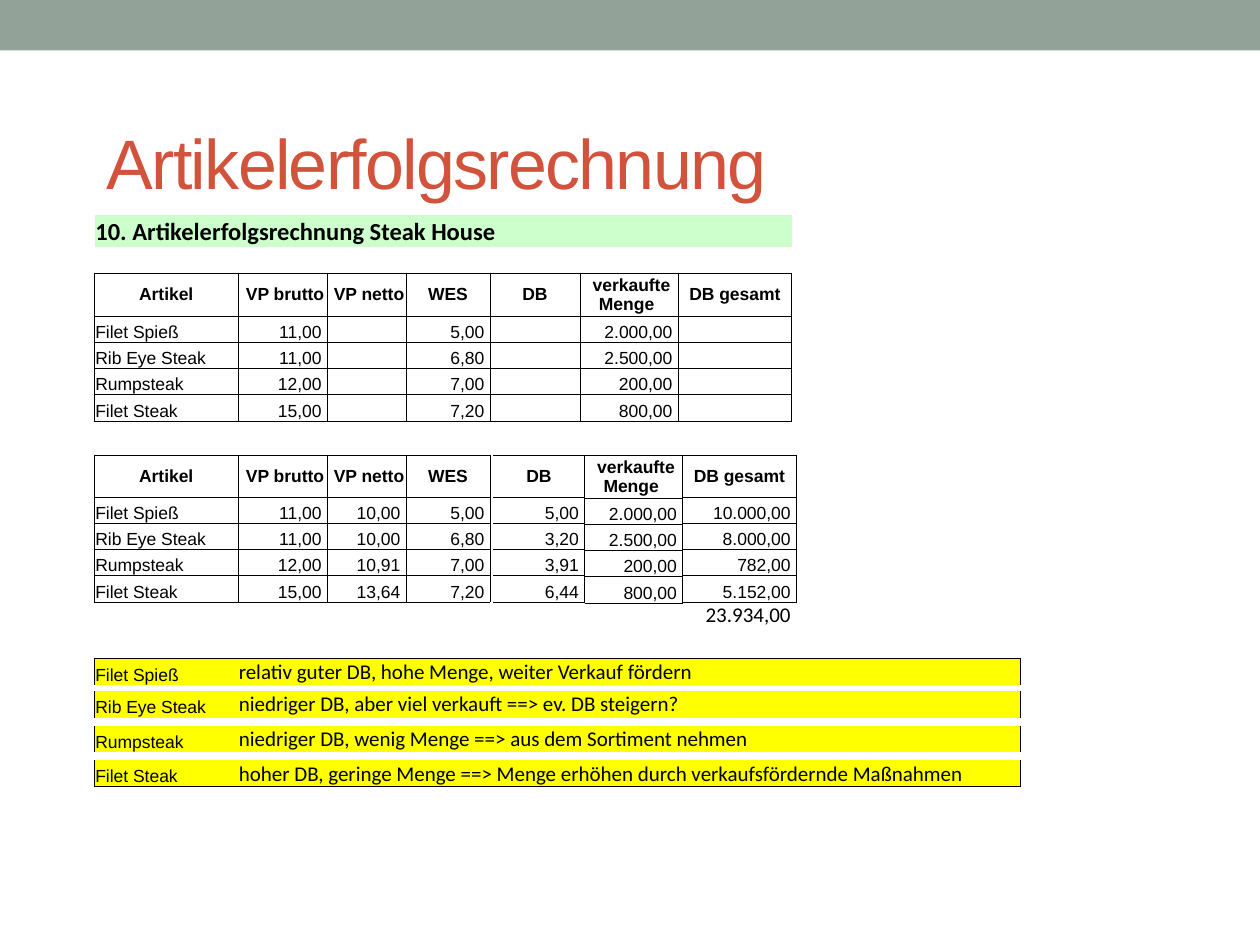
from dataclasses import dataclass

import pptx
import pptx.dml.color
import pptx.enum.shapes
import pptx.enum.text
import pptx.oxml
import pptx.oxml.ns
import pptx.util
from lxml import etree

Pt = pptx.util.Pt
ALIGN = pptx.enum.text.PP_ALIGN
ANCHOR = pptx.enum.text.MSO_ANCHOR
COLORS = {"band": "93A299", "title": "D2533C", "text": "000000", "line": "000000",
          "heading": "CCFFCC", "note": "FFFF00"}
NO_STYLE = "{2D5ABB26-0587-4C30-8999-92F81FD0307C}"
LEFT = 54
ROW, HEADER_ROW = 15, 24
WIDTHS = [82, 51, 45, 48, 51.5, 56, 65]


@dataclass
class Cell:
    text: str = ""
    align: ALIGN = ALIGN.LEFT
    anchor: ANCHOR = ANCHOR.BOTTOM
    font: str = "Arial"
    size: float = 10
    bold: bool = False
    fill: str = ""
    edges: str = "LRTB"


@dataclass
class Grid:
    left: float
    top: float
    widths: list[float]
    heights: list[float]
    rows: list[list[Cell]]


def rgb(name: str) -> pptx.dml.color.RGBColor:
    return pptx.dml.color.RGBColor.from_string(COLORS[name])


def write(tf, text: str, *, font="Arial", size=10, bold=False, color="text",
          align=ALIGN.LEFT, spacing=0) -> None:
    p = tf.paragraphs[0]
    p.alignment = align
    if not text:
        # The end mark sets the line height of an empty cell
        end = etree.SubElement(p._p, pptx.oxml.ns.qn("a:endParaRPr"))
        end.set("sz", str(size * 100))
        return
    r = p.add_run()
    r.text = text
    r.font.name, r.font.size, r.font.bold = font, Pt(size), bold
    r.font.color.rgb = rgb(color)
    if spacing:
        r.font._element.set("spc", str(spacing * 100))


def draw_edges(cell, edges: str) -> None:
    tc_pr = cell._tc.get_or_add_tcPr()
    for i, side in enumerate("LRTB"):
        paint = (f'<a:solidFill><a:srgbClr val="{COLORS["line"]}"/></a:solidFill>'
                 if side in edges else "<a:noFill/>")
        tc_pr.insert(i, pptx.oxml.parse_xml(
            f'<a:ln{side} {pptx.oxml.ns.nsdecls("a")} w="6350">{paint}</a:ln{side}>'))


def draw_grid(s, grid: Grid):
    frame = s.shapes.add_table(len(grid.heights), len(grid.widths), Pt(grid.left), Pt(grid.top),
                               Pt(sum(grid.widths)), Pt(sum(grid.heights)))
    table = frame.table
    table.first_row = table.horz_banding = False
    table._tbl.tblPr.find(pptx.oxml.ns.qn("a:tableStyleId")).text = NO_STYLE
    for column, width in zip(table.columns, grid.widths):
        column.width = Pt(width)
    for i, (height, row) in enumerate(zip(grid.heights, grid.rows)):
        table.rows[i].height = Pt(height)
        for j, c in enumerate(row):
            cell = table.cell(i, j)
            cell.margin_left = cell.margin_right = cell.margin_top = Pt(0.5)
            cell.margin_bottom = 0
            cell.vertical_anchor = c.anchor
            if c.fill:
                cell.fill.solid()
                cell.fill.fore_color.rgb = rgb(c.fill)
            else:
                cell.fill.background()
            write(cell.text_frame, c.text, font=c.font, size=c.size, bold=c.bold, align=c.align)
            draw_edges(cell, c.edges)
    return table


def header(text: str, edges="LRTB") -> Cell:
    return Cell(text, ALIGN.CENTER, ANCHOR.MIDDLE, bold=True, edges=edges)


def number(text: str, edges="LRTB") -> Cell:
    return Cell(f" {text} " if text else "", ALIGN.RIGHT, edges=edges)


# Data: article, gross price, net price, cost of goods, margin, quantity, total margin
TITLES = ["Artikel", " VP brutto ", " VP netto ", " WES ", " DB ", " verkaufte Menge ", " DB gesamt "]
ARTICLES = [
    ["Filet Spieß", "11,00", "10,00", "5,00", "5,00", "2.000,00", "10.000,00"],
    ["Rib Eye Steak", "11,00", "10,00", "6,80", "3,20", "2.500,00", "8.000,00"],
    ["Rumpsteak", "12,00", "10,91", "7,00", "3,91", "200,00", "782,00"],
    ["Filet Steak", "15,00", "13,64", "7,20", "6,44", "800,00", "5.152,00"],
]
TO_CALCULATE = (2, 4, 6)
NOTES = [
    (376.5, "relativ guter DB, hohe Menge, weiter Verkauf fördern"),
    (395, "niedriger DB, aber viel verkauft ==> ev. DB steigern?"),
    (415, "niedriger DB, wenig Menge ==> aus dem Sortiment nehmen"),
    (434.5, "hoher DB, geringe Menge ==> Menge erhöhen durch verkaufsfördernde Maßnahmen"),
]

prs = pptx.Presentation()
prs.slide_width, prs.slide_height = Pt(720), Pt(540)
s = prs.slides.add_slide(prs.slide_layouts[6])

# Top band
sp = s.shapes.add_shape(pptx.enum.shapes.MSO_SHAPE.RECTANGLE, 0, 0, Pt(720), Pt(28.8))
sp.shadow.inherit = False
sp.fill.solid()
sp.fill.fore_color.rgb = rgb("band")
sp.line.fill.background()

# Title
tf = s.shapes.add_textbox(Pt(LEFT), Pt(47.5), Pt(612), Pt(90)).text_frame
tf.word_wrap = True
tf.vertical_anchor = ANCHOR.MIDDLE
write(tf, "Artikelerfolgsrechnung", size=40, color="title", spacing=-1)

# Exercise table with its heading and blank columns
heading = [Cell("10. Artikelerfolgsrechnung Steak House" if j == 0 else "", font="Calibri",
                size=14, bold=True, fill="heading", edges="") for j in range(len(WIDTHS))]
exercise = [[Cell(a[0])] + [number("" if j in TO_CALCULATE else a[j]) for j in range(1, len(a))]
            for a in ARTICLES]
table = draw_grid(s, Grid(LEFT, 123, WIDTHS, [18, ROW, HEADER_ROW] + [ROW] * 4, [
    heading, [Cell(edges="B") for _ in WIDTHS], [header(t) for t in TITLES], *exercise]))
table.cell(0, 0).merge(table.cell(0, 4))

# Solution: four columns together, then one table for each later column
SOLUTION_TOP = 260
draw_grid(s, Grid(LEFT, SOLUTION_TOP, WIDTHS[:4], [HEADER_ROW] + [ROW] * 4, [
    [header(t) for t in TITLES[:4]],
    *[[Cell(a[0])] + [number(v) for v in a[1:4]] for a in ARTICLES]]))
for j, left, width in [(4, 282, 52), (5, 334, 56), (6, 390, 65)]:
    rows = [[header(TITLES[j], "TRB")]] + [[number(a[j], "TRB")] for a in ARTICLES]
    if j == 6:
        rows.append([Cell(" 23.934,00 ", ALIGN.RIGHT, font="Calibri", size=12, edges="T")])
    draw_grid(s, Grid(left, SOLUTION_TOP, [width], [HEADER_ROW] + [ROW] * (len(rows) - 1), rows))

# Assessment of each article
for i, (top, note) in enumerate(NOTES):
    last = i == len(NOTES) - 1
    rim = "T" if i == 0 else "B" if last else ""
    widths = [82, 447] if last else [82, 317, 65, 65]
    cells = [Cell(ARTICLES[i][0], fill="note", edges="L" + rim),
             Cell(note, font="Calibri", size=12, fill="note", edges=rim)]
    cells += [Cell(fill="note", edges=rim) for _ in widths[2:]]
    cells[-1].edges += "R"
    draw_grid(s, Grid(LEFT, top, widths, [ROW], [cells]))

prs.save("out.pptx")
